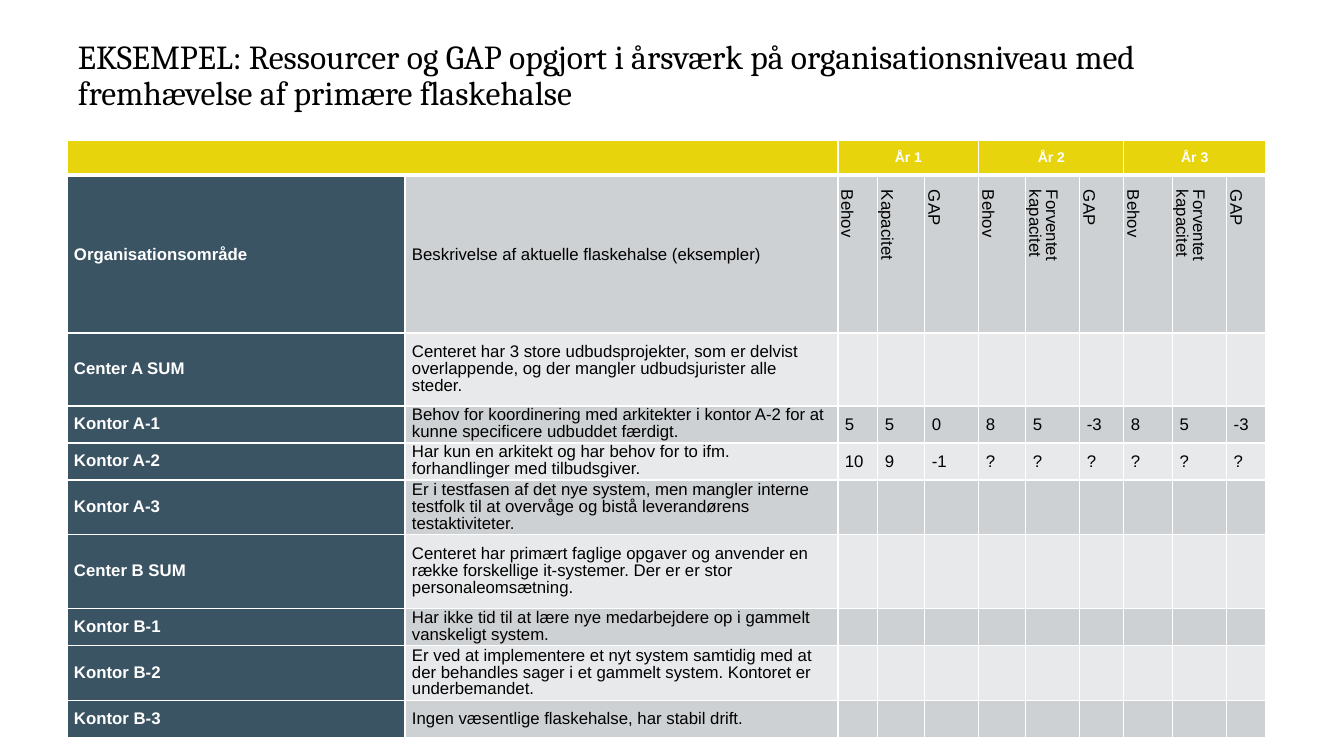
import lxml.etree
import pptx
import pptx.dml.color
import pptx.enum.text
import pptx.oxml.ns
import pptx.util

PX = 9071.43
BLACK = pptx.dml.color.RGBColor(0x00, 0x00, 0x00)
WHITE = pptx.dml.color.RGBColor(0xFF, 0xFF, 0xFF)
YELLOW = pptx.dml.color.RGBColor(0xE8, 0xD4, 0x0D)
SLATE = pptx.dml.color.RGBColor(0x3B, 0x54, 0x63)
GREY = pptx.dml.color.RGBColor(0xCE, 0xD1, 0xD3)
LIGHT = pptx.dml.color.RGBColor(0xE8, 0xE9, 0xEA)
LEFT = pptx.enum.text.PP_ALIGN.LEFT
CENTER = pptx.enum.text.PP_ALIGN.CENTER
TOP = pptx.enum.text.MSO_ANCHOR.TOP
MIDDLE = pptx.enum.text.MSO_ANCHOR.MIDDLE


def px(length):
    return pptx.util.Emu(round(length * PX))


def write(frame, text, size=12, font="Arial", color=BLACK, bold=False, align=LEFT, spacing=pptx.util.Pt(12), indent=0):
    paragraph = frame.paragraphs[0]
    paragraph.alignment = align
    paragraph.line_spacing = spacing
    if indent:
        paragraph._p.get_or_add_pPr().set("marL", str(px(indent)))
    run = paragraph.add_run()
    run.text = text
    run.font.size = pptx.util.Pt(size)
    run.font.name = font
    run.font.bold = bold
    run.font.color.rgb = color


presentation = pptx.Presentation()
presentation.slide_width = px(1344)
presentation.slide_height = px(756)
slide = presentation.slides.add_slide(presentation.slide_layouts[6])

title = slide.shapes.add_textbox(px(78), px(40), px(1189), px(103)).text_frame
title.word_wrap = True
title.vertical_anchor = TOP
title.margin_left = title.margin_right = title.margin_top = title.margin_bottom = 0
write(title, "EKSEMPEL: Ressourcer og GAP opgjort i årsværk på organisationsniveau med fremhævelse af primære flaskehalse",
      size=24, font="Cambria", spacing=0.9)

column_widths = [338, 433, 40, 47, 54, 47, 54, 44, 49, 54, 39]
row_heights = [35, 158, 73, 37, 37, 55, 74, 37, 55, 37]
years = ["År 1", "År 2", "År 3"]
measures = ["Behov", "Kapacitet", "GAP"] + ["Behov", "Forventet kapacitet", "GAP"] * 2
rows = [
    ["Organisationsområde", "Beskrivelse af aktuelle flaskehalse (eksempler)", measures],
    ["Center A SUM", "Centeret har 3 store udbudsprojekter, som er delvist overlappende, og der mangler udbudsjurister alle steder.", []],
    ["Kontor A-1", "Behov for koordinering med arkitekter i kontor A-2 for at kunne specificere udbuddet færdigt.",
     ["5", "5", "0", "8", "5", "-3", "8", "5", "-3"]],
    ["Kontor A-2", "Har kun en arkitekt og har behov for to ifm. forhandlinger med tilbudsgiver.",
     ["10", "9", "-1"] + ["?"] * 6],
    ["Kontor A-3", "Er i testfasen af det nye system, men mangler interne testfolk til at overvåge og bistå leverandørens testaktiviteter.", []],
    ["Center B SUM", "Centeret har primært faglige opgaver og anvender en række forskellige it-systemer. Der er er stor personaleomsætning.", []],
    ["Kontor B-1", "Har ikke tid til at lære nye medarbejdere op i gammelt vanskeligt system.", []],
    ["Kontor B-2", "Er ved at implementere et nyt system samtidig med at der behandles sager i et gammelt system. Kontoret er underbemandet.", []],
    ["Kontor B-3", "Ingen væsentlige flaskehalse, har stabil drift.", []],
]

table = slide.shapes.add_table(len(row_heights), len(column_widths), px(67), px(140),
                               px(sum(column_widths)), px(sum(row_heights))).table
table.first_row = False
table.horz_banding = False
for column, width in zip(table.columns, column_widths):
    column.width = px(width)
for row, height in zip(table.rows, row_heights):
    row.height = px(height)

for row_index in range(len(row_heights)):
    for column_index in range(len(column_widths)):
        cell = table.cell(row_index, column_index)
        cell.margin_left = cell.margin_right = px(7)
        cell.margin_top = cell.margin_bottom = 0
        cell.vertical_anchor = MIDDLE
        properties = cell._tc.get_or_add_tcPr()
        for side in ("lnL", "lnR", "lnT", "lnB"):
            heavy = (row_index, side) in ((0, "lnB"), (1, "lnT"))
            line = lxml.etree.SubElement(properties, pptx.oxml.ns.qn("a:" + side),
                                         w=str(pptx.util.Pt(3 if heavy else 1)))
            solid = lxml.etree.SubElement(line, pptx.oxml.ns.qn("a:solidFill"))
            lxml.etree.SubElement(solid, pptx.oxml.ns.qn("a:srgbClr"), val=str(WHITE))
        cell.fill.solid()
        if row_index == 0:
            cell.fill.fore_color.rgb = YELLOW
        elif column_index == 0:
            cell.fill.fore_color.rgb = SLATE
        else:
            cell.fill.fore_color.rgb = GREY if row_index % 2 else LIGHT

table.cell(0, 0).merge(table.cell(0, 1))
for index, year in enumerate(years):
    first = 2 + 3 * index
    table.cell(0, first).merge(table.cell(0, first + 2))
    write(table.cell(0, first).text_frame, year, size=10, color=WHITE, bold=True, align=CENTER)

for row_index, (area, description, values) in enumerate(rows, 1):
    heading = row_index == 1
    label_spacing = pptx.util.Pt(14 if heading else 12)
    write(table.cell(row_index, 0).text_frame, area, color=WHITE, bold=True, spacing=label_spacing)
    write(table.cell(row_index, 1).text_frame, description, spacing=label_spacing)
    for column_index, value in enumerate(values, 2):
        cell = table.cell(row_index, column_index)
        if heading:
            cell._tc.get_or_add_tcPr().set("vert", "vert")
        write(cell.text_frame, value, spacing=pptx.util.Pt(12 if heading else 14), indent=8 if heading else 0)
table.cell(1, len(column_widths) - 1).vertical_anchor = TOP

presentation.save("out.pptx")
